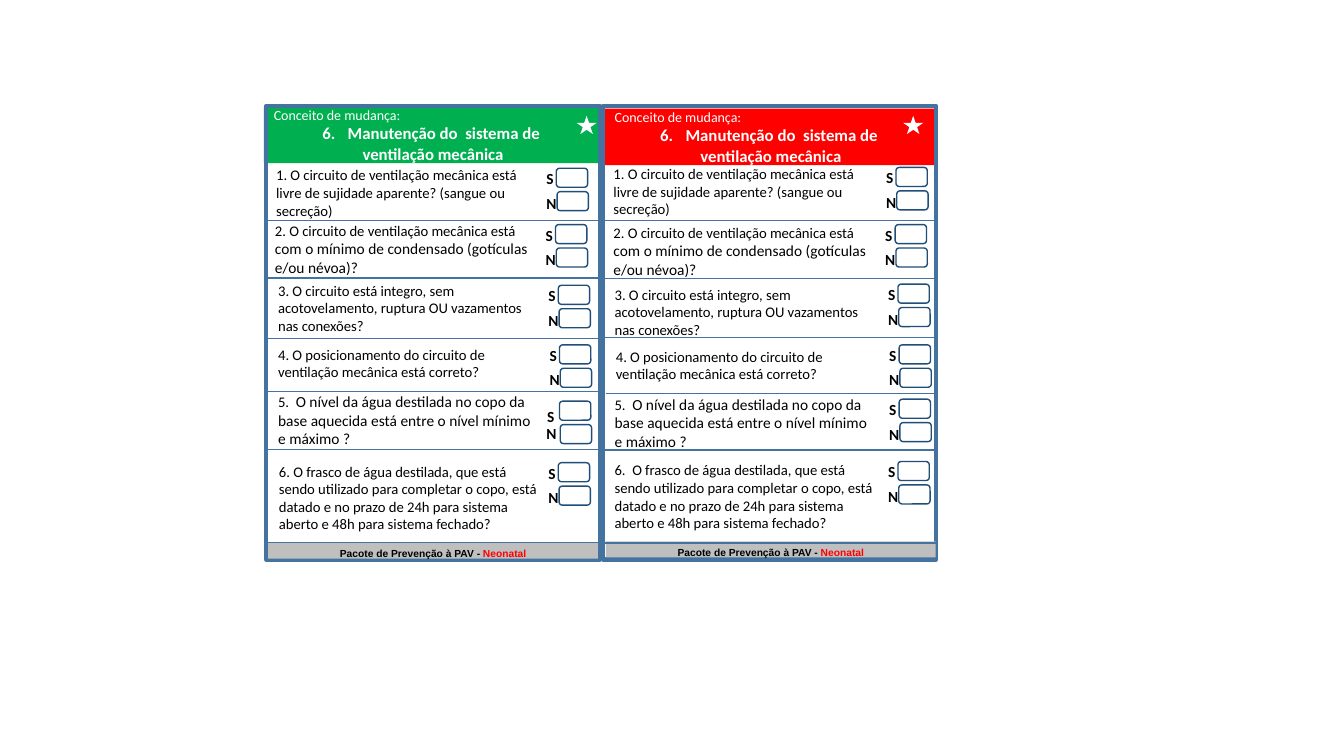
import pptx
import pptx.dml.color
import pptx.enum.shapes
import pptx.enum.text
import pptx.oxml.ns
import pptx.util
from lxml import etree

Cm, Pt = pptx.util.Cm, pptx.util.Pt
RGB = pptx.dml.color.RGBColor.from_string
SHAPE = pptx.enum.shapes.MSO_SHAPE
ALIGN = pptx.enum.text.PP_ALIGN
ANCHOR = pptx.enum.text.MSO_ANCHOR
qn = pptx.oxml.ns.qn

COLORS = {
    "green": "00B050", "red": "FF0000", "white": "FFFFFF", "black": "000000",
    "gray": "BFBFBF", "frame": "43739E", "checkbox": "1F4E79",
}

# Each question: its height and its runs as (text, size)
QUESTIONS = [
    (1.37, [("O circuito de ventilação mecânica está livre de sujidade aparente? (sangue ou secreção)", 10.5)]),
    (1.37, [("O circuito de ventilação mecânica está ", 10.5),
            ("com o mínimo de condensado (gotículas e/ou névoa)?", 11)]),
    (1.40, [("O circuito está integro, sem acotovelamento, ruptura OU vazamentos nas conexões?", 10.5)]),
    (1.09, [("O posicionamento do circuito de ventilação mecânica está correto?", 10.5)]),
    (0.79, [("", 10.5),
            ("O nível da água destilada no copo da base aquecida está entre o nível mínimo e máximo ?", 11)]),
    (0.94, [("O frasco de água destilada, que está sendo utilizado para completar o copo, está datado "
             "e no prazo de 24h para sistema aberto e 48h para sistema fechado?", 10.5)]),
]

# Lengths in cm. A prefix of None stands for an automatic number.
# Offsets of the letters S and N are measured from the upper checkbox.
USUAL_LETTERS = [("S", -0.5, 0.07), ("N", -0.5, 0.69)]
LOW_LETTERS = [("S", -0.56, 0.2), ("N", -0.58, 0.61)]
CARDS = [
    {
        "color": "green", "header": (6.65, 2.69, 8.53, 1.42), "frame_left": 6.71,
        "star_left": 14.53, "footer": (6.76, 13.67),
        "prefixes": ["1. ", "2. ", None, None, "5.  ", "6. "],
        "questions": [(6.71, 4.17), (6.68, 5.59), (6.76, 7.06), (6.76, 8.61), (6.76, 10.19), (6.78, 12.07)],
        "rules": [(6.71, 5.56), (6.65, 7.01), (6.73, 8.53), (6.71, 9.86), (6.73, 11.33), (6.65, 13.67)],
        "rule_end": 15.2,
        "checkboxes": [(14.02, 4.24), (14, 5.66), (14.07, 7.19), (14.1, 8.69), (14.1, 10.11), (14.07, 11.66)],
        "low_letters": [4],
    },
    {
        "color": "red", "header": (15.24, 2.74, 8.38, 1.42), "frame_left": 15.19,
        "star_left": 22.76, "footer": (15.27, 13.64),
        "prefixes": [None, "2. ", None, None, "5.  ", "6.  "],
        "questions": [(15.21, 4.14), (15.21, 5.64), (15.24, 7.16), (15.27, 8.66), (15.24, 10.26), (15.24, 12.04)],
        "rules": [(15.06, 5.55), (15.09, 7.02), (15.06, 8.51), (15.27, 9.91), (15.24, 11.34), (15.09, 13.68)],
        "rule_end": 23.6,
        "checkboxes": [(22.58, 4.22), (22.56, 5.66), (22.63, 7.16), (22.66, 8.69), (22.66, 10.06), (22.63, 11.63)],
        "low_letters": [],
    },
]


def write(box, text, size=10.5, color="black", bold=False, font="Calibri",
          align=ALIGN.LEFT, anchor=ANCHOR.MIDDLE, number=None, indent=0, join=False):
    """Add a paragraph, or with join a further span of the last one."""
    frame = box.text_frame
    frame.word_wrap = True
    frame.vertical_anchor = anchor
    para = frame.paragraphs[-1]
    if para.runs and not join:
        para = frame.add_paragraph()
    para.alignment = align
    if number:
        props = para._p.get_or_add_pPr()
        props.set("marL", str(Cm(indent)))
        props.set("indent", str(-Cm(indent)))
        etree.SubElement(props, qn("a:buAutoNum"), type="arabicPeriod", startAt=str(number))
    span = para.add_run()
    span.text = text
    span.font.size = Pt(size)
    span.font.name = font
    span.font.bold = bold
    span.font.color.rgb = RGB(COLORS[color])


def add_shape(kind, left, top, width, height, fill=None, line=None, weight=1):
    shape = page.shapes.add_shape(kind, Cm(left), Cm(top), Cm(width), Cm(height))
    shape.shadow.inherit = False
    if fill:
        shape.fill.solid()
        shape.fill.fore_color.rgb = RGB(COLORS[fill])
    else:
        shape.fill.background()
    if line:
        shape.line.color.rgb = RGB(COLORS[line])
        shape.line.width = Pt(weight)
    else:
        shape.line.fill.background()
    return shape


deck = pptx.Presentation()
deck.slide_width, deck.slide_height = Cm(33.87), Cm(19.05)
page = deck.slides.add_slide(deck.slide_layouts[6])

for card in CARDS:
    header = add_shape(SHAPE.RECTANGLE, *card["header"], fill=card["color"])
    write(header, "Conceito de mudança:", size=10, color="white")
    write(header, "Manutenção do  sistema de ", size=12, color="white", bold=True,
          align=ALIGN.CENTER, number=6, indent=0.64)
    write(header, "ventilação mecânica", size=12, color="white", bold=True, align=ALIGN.CENTER)
    add_shape(SHAPE.RECTANGLE, card["frame_left"], 2.67, 8.41, 11.43, line="frame", weight=3)
    add_shape(SHAPE.STAR_5_POINT, card["star_left"], 2.92, 0.51, 0.46, fill="white")

    footer = add_shape(SHAPE.RECTANGLE, *card["footer"], 8.31, 0.41, fill="gray")
    write(footer, "Pacote de Prevenção à PAV - ", size=7.3, bold=True, font="Arial",
          align=ALIGN.CENTER, anchor=ANCHOR.TOP)
    write(footer, "Neonatal", size=7.3, color="red", bold=True, font="Arial",
          align=ALIGN.CENTER, anchor=ANCHOR.TOP, join=True)

    for left, top in card["rules"]:
        rule = page.shapes.add_connector(pptx.enum.shapes.MSO_CONNECTOR.STRAIGHT,
                                         Cm(left), Cm(top), Cm(card["rule_end"]), Cm(top))
        rule.line.color.rgb = RGB(COLORS["frame"])
        rule.line.width = Pt(1)
        etree.SubElement(rule._element.spPr, qn("a:effectLst"))

    for row, (height, spans) in enumerate(QUESTIONS):
        left, top = card["questions"][row]
        question = page.shapes.add_textbox(Cm(left), Cm(top), Cm(7.04), Cm(height))
        prefix = card["prefixes"][row]
        (first_text, first_size), *more_spans = spans
        write(question, (prefix or " ") + first_text, size=first_size,
              number=None if prefix else row + 1)
        for text, size in more_spans:
            write(question, text, size=size, join=True)

        left, top = card["checkboxes"][row]
        for step in range(2):
            add_shape(SHAPE.ROUNDED_RECTANGLE, left + 0.02 * step, top + 0.59 * step,
                      0.79, 0.48, line="checkbox")
        letters = LOW_LETTERS if row in card["low_letters"] else USUAL_LETTERS
        for letter, across, down in letters:
            label = page.shapes.add_textbox(Cm(left + across), Cm(top + down), Cm(0.58), Cm(0.38))
            write(label, letter, size=11, bold=True, align=ALIGN.CENTER)

deck.save("out.pptx")
